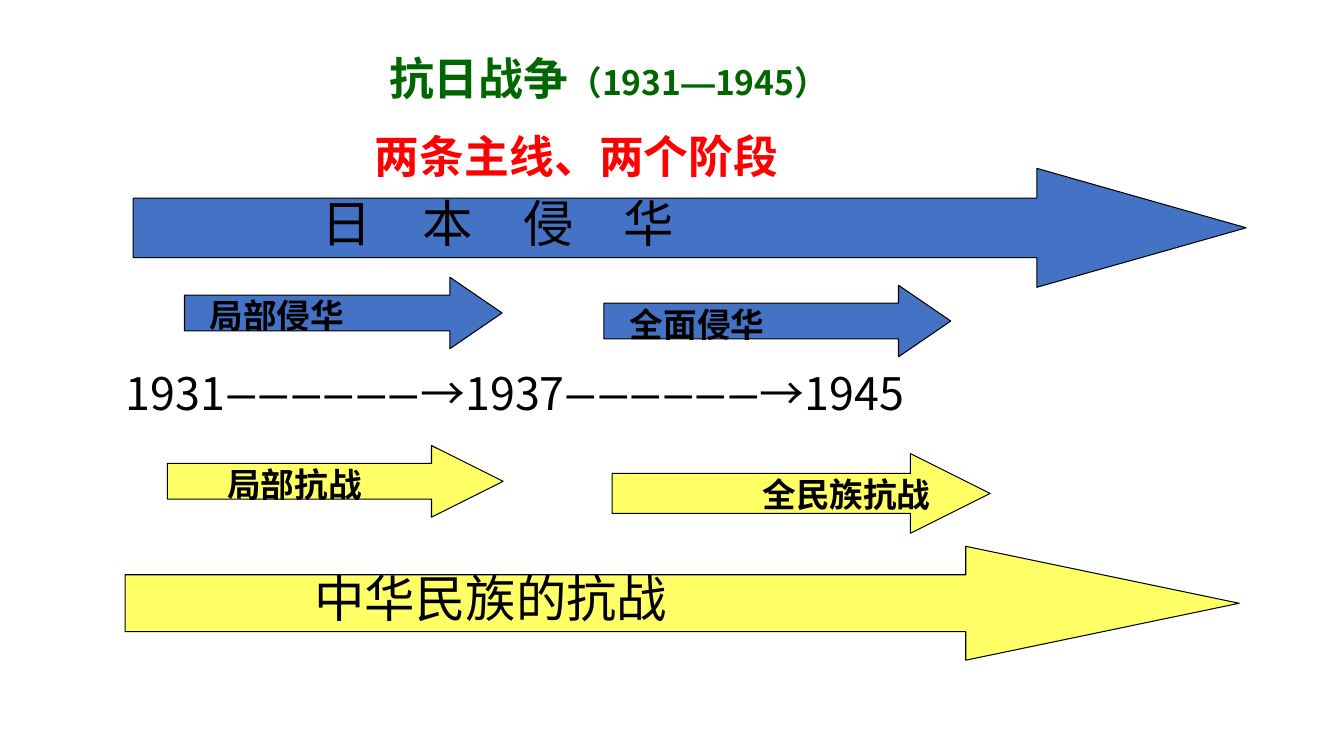
"""Build a slide on the two main lines and two stages of the 1931—1945 war."""
import pptx
import pptx.dml.color
import pptx.enum.lang
import pptx.enum.shapes
import pptx.enum.text
import pptx.oxml
import pptx.oxml.ns
import pptx.util

Inches = pptx.util.Inches
Align = pptx.enum.text.PP_ALIGN
Shape = pptx.enum.shapes.MSO_SHAPE
BLUE, YELLOW, BLACK = "4472C4", "FFFF66", "000000"


def color(value):
    return pptx.dml.color.RGBColor.from_string(value)


def write(holder, runs, ink, bold=False, align=Align.LEFT, wrap=True):
    holder.text_frame.word_wrap = wrap
    paragraph = holder.text_frame.paragraphs[0]
    paragraph.alignment = align
    for text, size, face in runs:
        run = paragraph.add_run()
        run.text = text
        run.font.size = pptx.util.Pt(size)
        run.font.bold = bold
        run.font.color.rgb = color(ink)
        run.font.name = face
        run.font.language_id = pptx.enum.lang.MSO_LANGUAGE_ID.SIMPLIFIED_CHINESE
        east_asian = pptx.oxml.parse_xml(
            f'<a:ea {pptx.oxml.ns.nsdecls("a")} typeface="{face}"/>')
        run.font._element.find(pptx.oxml.ns.qn("a:latin")).addnext(east_asian)


deck = pptx.Presentation()
deck.slide_width, deck.slide_height = Inches(13.33), Inches(7.5)
slide = deck.slides.add_slide(deck.slide_layouts[6])

stages = [
    ("日　本　侵　华", 36, BLUE, 1.76, Align.LEFT,
     (1.32, 1.67, 11.04, 1.18), (3.09, 1.86, 5.42, 0.7)),
    ("局部侵华", 24, BLUE, 0.73, Align.LEFT,
     (1.83, 2.75, 3.15, 0.71), (1.98, 2.88, 2.04, 0.5)),
    ("全面侵华", 24, BLUE, 0.73, Align.LEFT,
     (5.99, 2.83, 3.44, 0.71), (6.15, 2.97, 2.23, 0.5)),
    ("局部抗战", 24, YELLOW, 1, Align.CENTER,
     (1.66, 4.42, 3.33, 0.71), (1.81, 4.55, 2.22, 0.5)),
    ("全民族抗战", 24, YELLOW, 1, Align.CENTER,
     (6.07, 4.5, 3.75, 0.79), (7.14, 4.65, 2.51, 0.5)),
    ("中华民族的抗战", 36, YELLOW, 2.4, Align.LEFT,
     (1.24, 5.42, 11.05, 1.13), (3.02, 5.58, 5.41, 0.7)),
]
for name, size, fill, head_length, align, arrow_box, label_box in stages:
    stage = slide.shapes.add_group_shape()
    arrow = stage.shapes.add_shape(Shape.RIGHT_ARROW, *map(Inches, arrow_box))
    arrow.shadow.inherit = False
    arrow.adjustments[0] = 0.5
    arrow.adjustments[1] = head_length
    arrow.fill.solid()
    arrow.fill.fore_color.rgb = color(fill)
    arrow.line.color.rgb = color(BLACK)
    arrow.line.width = pptx.util.Pt(0.75)
    label = stage.shapes.add_textbox(*map(Inches, label_box))
    write(label, [(name, size, "Arial")], BLACK, bold=size == 24, align=align)

timeline = slide.shapes.add_textbox(Inches(1.15), Inches(3.58), Inches(11.57), Inches(0.64))
write(timeline, [
    ("1931", 32, "Noto Sans CJK JP"),
    ("——————", 32, "Karla"),
    ("→1937", 32, "Noto Sans CJK JP"),
    ("——————", 32, "Karla"),
    ("→1945", 32, "Noto Sans CJK JP"),
], BLACK)

subtitle = slide.shapes.add_textbox(Inches(3.62), Inches(1.23), Inches(4.22), Inches(0.64))
write(subtitle, [("两条主线、两个阶段", 32, "Arial")], "FF0000", bold=True, wrap=False)

title = slide.shapes.add_shape(
    Shape.RECTANGLE, Inches(3.76), Inches(0.29), Inches(4.85), Inches(0.95))
title.shadow.inherit = False
title.fill.solid()
title.fill.fore_color.rgb = color("FFFFFF")
title.line.fill.background()
title.text_frame.vertical_anchor = pptx.enum.text.MSO_ANCHOR.MIDDLE
write(title, [
    ("抗日战争", 32, "Noto Sans CJK SC"),
    ("（1931", 24, "Noto Sans CJK SC"),
    ("—", 24, "Arial"),
    ("1945）", 24, "Noto Sans CJK SC"),
], "006600", bold=True)

deck.save("out.pptx")
